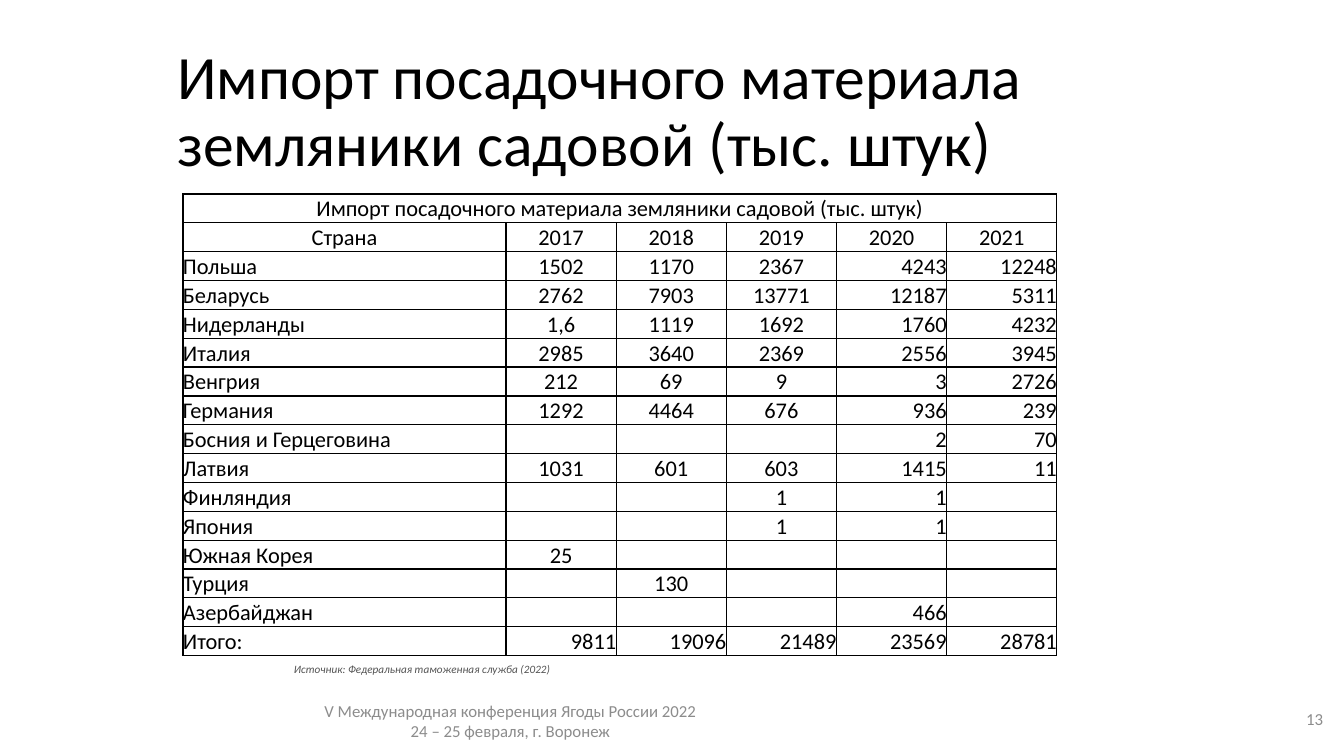
"""Build the slide on imports of strawberry planting material."""
from dataclasses import dataclass

from lxml import etree
from pptx import Presentation
from pptx.dml.color import RGBColor
from pptx.enum.text import MSO_ANCHOR, MSO_AUTO_SIZE, PP_ALIGN
from pptx.oxml.ns import qn
from pptx.util import Pt

LEFT, CENTER, RIGHT = PP_ALIGN.LEFT, PP_ALIGN.CENTER, PP_ALIGN.RIGHT
TOP, MIDDLE, BOTTOM = MSO_ANCHOR.TOP, MSO_ANCHOR.MIDDLE, MSO_ANCHOR.BOTTOM
NO_AUTOFIT = MSO_AUTO_SIZE.NONE

TITLE = "Импорт посадочного материала земляники садовой (тыс. штук)"
SOURCE = "Источник: Федеральная таможенная служба (2022)"
CONFERENCE = ["V Международная конференция Ягоды России 2022", "24 – 25 февраля, г. Воронеж"]
PAGE_NUMBER = "13"
HEADER = ("Страна", "2017", "2018", "2019", "2020", "2021")
COUNTRIES = [
    ("Польша", "1502", "1170", "2367", "4243", "12248"),
    ("Беларусь", "2762", "7903", "13771", "12187", "5311"),
    ("Нидерланды", "1,6", "1119", "1692", "1760", "4232"),
    ("Италия", "2985", "3640", "2369", "2556", "3945"),
    ("Венгрия", "212", "69", "9", "3", "2726"),
    ("Германия", "1292", "4464", "676", "936", "239"),
    ("Босния и Герцеговина", "", "", "", "2", "70"),
    ("Латвия", "1031", "601", "603", "1415", "11"),
    ("Финляндия", "", "", "1", "1", ""),
    ("Япония", "", "", "1", "1", ""),
    ("Южная Корея", "25", "", "", "", ""),
    ("Турция", "", "130", "", "", ""),
    ("Азербайджан", "", "", "", "466", ""),
]
TOTAL = ("Итого:", "9811", "19096", "21489", "23569", "28781")

SLIDE_SIZE = (1344, 756)
TITLE_BOX = (167, 40, 1018, 146)
TABLE_BOX = (183, 194, 874, 462)
SOURCE_BOX = (288, 656, 420, 36)
CONFERENCE_BOX = (214, 701, 593, 40)
NUMBER_BOX = (1252, 699, 81, 40)
COUNTRY_WIDTH = 323
SOURCE_INSET = 6


@dataclass(frozen=True)
class Theme:
    """Colours, font and type sizes of the slide."""
    font: str = "Calibri"
    ink: str = "000000"
    muted: str = "8C8C8C"
    source: str = "535353"
    title_size: int = 44
    table_size: int = 16
    footer_size: int = 12
    source_size: int = 8
    border: int = 1


THEME = Theme()


def px(length):
    """Turn pixels into EMU."""
    return round(length * 914400 / 100.8)


def write(para, text, size, color, align=LEFT, italic=False):
    """Add one formatted run to a paragraph."""
    para.alignment = align
    span = para.add_run()
    span.text = text
    span.font.name = THEME.font
    span.font.size = Pt(size)
    span.font.italic = italic
    span.font.color.rgb = RGBColor.from_string(color)


def size_empty(para, size):
    """Set the type size of a paragraph without text."""
    etree.SubElement(para._p, qn("a:endParaRPr"), sz=str(size * 100))


def add_text(page, place, lines, size, color, align, anchor=MIDDLE, inset=None, italic=False):
    """Add a wrapped text box with one paragraph per line."""
    frame = page.shapes.add_textbox(*map(px, place)).text_frame
    frame.word_wrap = True
    frame.vertical_anchor = anchor
    if inset is not None:
        frame.margin_left = frame.margin_right = px(inset)
        frame.margin_top = frame.margin_bottom = px(inset)
    for index, line in enumerate(lines):
        para = frame.add_paragraph() if index else frame.paragraphs[0]
        write(para, line, size, color, align, italic)


def add_borders(cell):
    """Draw a solid line on each side of a cell."""
    properties = cell._tc.get_or_add_tcPr()
    for index, side in enumerate(("a:lnL", "a:lnR", "a:lnT", "a:lnB")):
        line = etree.Element(qn(side), w=str(Pt(THEME.border)))
        fill = etree.SubElement(line, qn("a:solidFill"))
        etree.SubElement(fill, qn("a:srgbClr"), val=THEME.ink)
        properties.insert(index, line)


def cell_align(row, column, last_row):
    """Give the alignment of a cell from its place in the table."""
    if row < 2:
        return CENTER
    if column == 0:
        return LEFT
    return RIGHT if column > 3 or row == last_row else CENTER


def add_import_table(page):
    """Add the table of imports by country and year."""
    caption = (TITLE,) + ("",) * (len(HEADER) - 1)
    rows = [caption, HEADER, *COUNTRIES, TOTAL]
    table = page.shapes.add_table(len(rows), len(HEADER), *map(px, TABLE_BOX)).table
    table.first_row = table.horz_banding = False
    year_width = (TABLE_BOX[2] - COUNTRY_WIDTH) / (len(HEADER) - 1)
    for index, column in enumerate(table.columns):
        column.width = px(year_width if index else COUNTRY_WIDTH)
    for row in table.rows:
        row.height = px(TABLE_BOX[3] / len(rows))
    table.cell(0, 0).merge(table.cell(0, len(HEADER) - 1))
    for row, values in enumerate(rows):
        for column, value in enumerate(values):
            cell = table.cell(row, column)
            cell.margin_left = cell.margin_right = cell.margin_top = cell.margin_bottom = 0
            cell.vertical_anchor = BOTTOM
            cell.fill.background()
            add_borders(cell)
            para = cell.text_frame.paragraphs[0]
            if value:
                align = cell_align(row, column, len(rows) - 1)
                write(para, value, THEME.table_size, THEME.ink, align)
            else:
                size_empty(para, THEME.table_size)


def main():
    """Build and save the deck."""
    deck = Presentation()
    deck.slide_width, deck.slide_height = map(px, SLIDE_SIZE)
    page = deck.slides.add_slide(deck.slide_layouts[5])

    title = page.shapes.title
    title.left, title.top, title.width, title.height = map(px, TITLE_BOX)
    title.text_frame.auto_size = NO_AUTOFIT
    title.text_frame.vertical_anchor = MIDDLE
    heading = title.text_frame.paragraphs[0]
    heading.line_spacing = 0.9
    write(heading, TITLE, THEME.title_size, THEME.ink)

    add_text(page, CONFERENCE_BOX, CONFERENCE, THEME.footer_size, THEME.muted, CENTER)
    add_text(page, NUMBER_BOX, [PAGE_NUMBER], THEME.footer_size, THEME.muted, RIGHT)
    add_text(page, SOURCE_BOX, [SOURCE], THEME.source_size, THEME.source, LEFT,
             TOP, SOURCE_INSET, True)
    add_import_table(page)
    deck.save("out.pptx")


if __name__ == "__main__":
    main()
